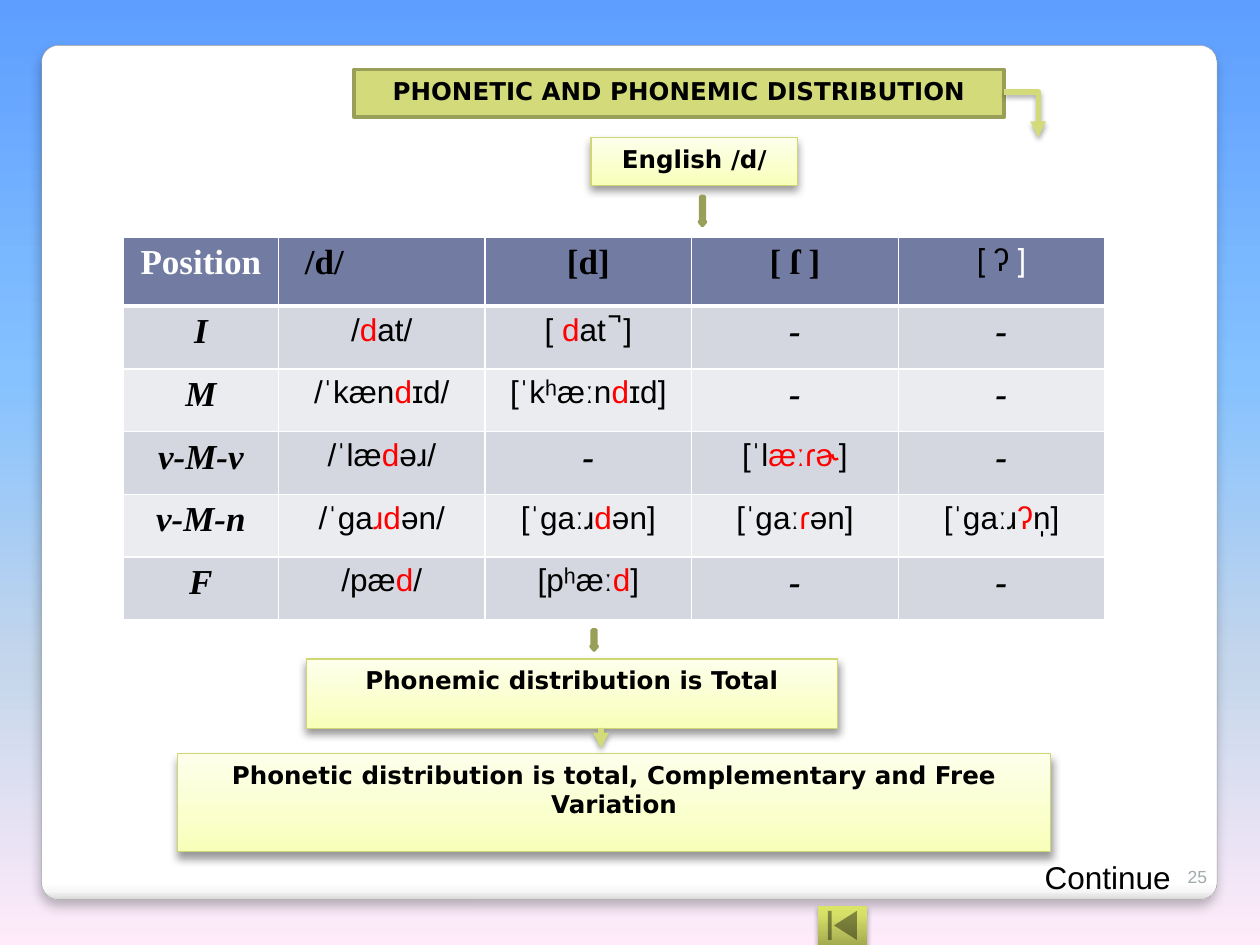
from lxml import etree
from pptx import Presentation
from pptx.dml.color import RGBColor
from pptx.enum import shapes, text
from pptx.oxml.ns import qn
from pptx.util import Inches, Pt

CENTER = text.PP_ALIGN.CENTER
LEFT = text.PP_ALIGN.LEFT
RIGHT = text.PP_ALIGN.RIGHT
RECT = shapes.MSO_SHAPE.RECTANGLE
LABEL = dict(name="DejaVu Sans", size=Pt(14), bold=True, italic=False)
HEADING = dict(name="Times New Roman", size=Pt(20), bold=True, italic=False)
MARK = dict(HEADING, italic=True)
SOUND = dict(name="Arial", size=Pt(18), bold=False, italic=False)
NUMBER = dict(SOUND, size=Pt(10))

SKY = [(0, "5E9EFF"), (40, "85C2FF"), (70, "C4D6EB"), (100, "FFEBFA")]
PAPER = [(0, "FFFFFF"), (98, "FFFFFF"), (99, "F7F7F7"), (100, "D9D9D9")]
CREAM = [(0, "F8FFB8"), (35, "FAFFCC"), (100, "FDFFEB")]
OLIVE = [(0, "A3AB4F"), (80, "D7E168"), (100, "DAE466")]

HEADERS = [
    ([("Position", "FFFFFF")], HEADING),
    ([("/d/", "000000")], HEADING),
    ([("[d]", "000000")], HEADING),
    ([("[ ſ ]", "000000")], HEADING),
    ([("[ ", "FFFFFF"), ("ʔ ]", "000000")], SOUND),
]
ROWS = [
    ("I", "/|d|at/", "[ |d|at ̚ ]", "-", "-"),
    ("M", "/ˈkæn|d|ɪd/", "[ˈkʰæːn|d|ɪd]", "-", "-"),
    ("v-M-v", "/ˈlæ|d|əɹ/", "-", "[ˈl|æːɾɚ|]", "-"),
    ("v-M-n", "/ˈga|ɹd|ən/", "[ˈgaːɹ|d|ən]", "[ˈgaː|ɾ|ən]", "[ˈgaːɹ|ʔ|n̩]"),
    ("F", "/pæ|d|/", "[pʰæː|d|]", "-", "-"),
]


def rgb(value):
    return RGBColor.from_string(value)


def apply(obj, values):
    for name, value in values.items():
        setattr(obj, name, value)


def inches(box):
    return [Inches(v) for v in box]


def add_color(parent, value, alpha=100):
    clr = etree.SubElement(parent, qn("a:srgbClr"), val=value)
    if alpha < 100:
        etree.SubElement(clr, qn("a:alpha"), val=str(alpha * 1000))


def gradient(fill, element, stops, angle):
    fill.gradient()
    fill.gradient_angle = angle
    gs_list = next(element.iter(qn("a:gsLst")))
    for gs in list(gs_list):
        gs_list.remove(gs)
    for pos, value in stops:
        gs = etree.SubElement(gs_list, qn("a:gs"), pos=str(pos * 1000))
        add_color(gs, value)


def outline(sp, value, width):
    sp.line.color.rgb = rgb(value)
    sp.line.width = Pt(width)


def shadow(sp, alpha, blur, dist):
    effects = sp.element.spPr.find(qn("a:effectLst"))
    if effects is None:
        effects = etree.SubElement(sp.element.spPr, qn("a:effectLst"))
    outer = etree.SubElement(effects, qn("a:outerShdw"), blurRad=str(Pt(blur)),
                             dist=str(Pt(dist)), dir="5400000", rotWithShape="0")
    add_color(outer, "000000", alpha)


def arrowhead(sp):
    ln = sp.element.spPr.find(qn("a:ln"))
    etree.SubElement(ln, qn("a:tailEnd"), type="triangle")


def write(tf, runs, font, align):
    p = tf.paragraphs[0]
    p.alignment = align
    for content, value in runs:
        r = p.add_run()
        r.text = content
        apply(r.font, font)
        r.font.color.rgb = rgb(value)
    return p


def frame(tf, **values):
    margins = dict.fromkeys(("margin_left", "margin_top", "margin_right", "margin_bottom"), Inches(0.05))
    apply(tf, dict(margins, **values))


def outline_shape(s, contours, closed=True):
    builder = None
    for points in contours:
        points = [inches(pt) for pt in points]
        if builder is None:
            builder = s.shapes.build_freeform(*points[0])
        else:
            builder.move_to(*points[0])
        builder.add_line_segments(points[1:], close=closed)
    sp = builder.convert_to_shape()
    sp.shadow.inherit = False
    return sp


def panel(s, box):
    sp = s.shapes.add_shape(shapes.MSO_SHAPE.ROUNDED_RECTANGLE, *inches(box))
    sp.adjustments[0] = 0.02
    sp.shadow.inherit = False
    gradient(sp.fill, sp.element, PAPER, 270)
    outline(sp, "A2A1A1", 0.25)
    shadow(sp, 25, 6, 4)


def label(s, box, content, title=False):
    sp = s.shapes.add_shape(RECT, *inches(box))
    sp.shadow.inherit = False
    if title:
        sp.fill.solid()
        sp.fill.fore_color.rgb = rgb("D2DA7A")
        outline(sp, "999F59", 2)
    else:
        gradient(sp.fill, sp.element, CREAM, 90)
        outline(sp, "CFD775", 0.75)
        shadow(sp, 40, 5, 3)
    frame(sp.text_frame, word_wrap=True, vertical_anchor=text.MSO_ANCHOR.TOP)
    write(sp.text_frame, [(content, "000000")], LABEL, CENTER)


def caption(s, box, content, value, font, align, **values):
    sp = s.shapes.add_textbox(*inches(box))
    frame(sp.text_frame, **values)
    write(sp.text_frame, [(content, value)], font, align)


def down_arrow(s, box):
    x, y, w, h = box
    neck = y + h - 0.03
    inner, outer = x + 0.01, x + w - 0.01
    sp = outline_shape(s, [[(x, neck), (inner, neck), (inner, y), (outer, y),
                            (outer, neck), (x + w, neck), (x + w / 2, y + h)]])
    sp.fill.solid()
    sp.fill.fore_color.rgb = rgb("D2DA7A")
    outline(sp, "999F59", 2)


def elbow_arrow(s, box):
    x, y, w, h = box
    sp = outline_shape(s, [[(x, y), (x + w, y), (x + w, y + h)]], closed=False)
    sp.fill.background()
    outline(sp, "D2DA7A", 3)
    arrowhead(sp)
    shadow(sp, 35, 3, 1.8)


def straight_arrow(s, box):
    x, y, w, h = box
    sp = s.shapes.add_connector(shapes.MSO_CONNECTOR.STRAIGHT, *inches((x, y, x + w, y + h)))
    outline(sp, "D2DA7A", 3)
    arrowhead(sp)
    shadow(sp, 35, 3, 1.8)


def style_cell(cell, fill, bottom):
    pr = cell._tc.get_or_add_tcPr()
    for side, width in zip("LRTB", (1, 1, 1, bottom)):
        ln = etree.SubElement(pr, qn("a:ln" + side), w=str(Pt(width)))
        add_color(etree.SubElement(ln, qn("a:solidFill")), "FFFFFF")
    cell.fill.solid()
    cell.fill.fore_color.rgb = rgb(fill)
    frame(cell)


def distribution_table(s, box):
    table = s.shapes.add_table(len(ROWS) + 1, len(HEADERS), *inches(box)).table
    first_col, first_row = 1.23, 0.55
    for i, col in enumerate(table.columns):
        col.width = Inches((box[2] - first_col) / (len(HEADERS) - 1) if i else first_col)
    for i, row in enumerate(table.rows):
        row.height = Inches((box[3] - first_row) / len(ROWS) if i else first_row)
    for i, (runs, font) in enumerate(HEADERS):
        cell = table.cell(0, i)
        style_cell(cell, "727CA3", 3)
        p = write(cell.text_frame, runs, font, LEFT if i == 1 else CENTER)
        if i == 1:
            cell.margin_left = Inches(0.21)
        if font is SOUND:
            p._p.get_or_add_pPr().set("rtl", "1")
    for i, row in enumerate(ROWS, 1):
        for j, content in enumerate(row):
            cell = table.cell(i, j)
            style_cell(cell, "D4D6E0" if i % 2 else "EBECF0", 1)
            runs = [(part, "FF0000" if k % 2 else "000000") for k, part in enumerate(content.split("|"))]
            write(cell.text_frame, runs, SOUND if len(runs) > 1 else MARK, CENTER)


def back_button(s, box):
    x, y, w, h = box
    sp = s.shapes.add_shape(RECT, *inches(box))
    sp.shadow.inherit = False
    gradient(sp.fill, sp.element, OLIVE, 90)
    sp.line.fill.background()
    shadow(sp, 35, 3, 1.8)
    left, top, size = x + 0.08, y + 0.04, 0.23
    right, bottom = left + size, top + size
    icon = outline_shape(s, [
        [(left + 0.05, top + size / 2), (right, top), (right, bottom)],
        [(left + 0.03, top), (left, top), (left, bottom), (left + 0.03, bottom)],
    ])
    icon.fill.solid()
    icon.fill.fore_color.rgb = rgb("000000")
    clr = icon.element.spPr.find(qn("a:solidFill"))[0]
    etree.SubElement(clr, qn("a:alpha"), val="40000")
    icon.line.fill.background()


def main():
    prs = Presentation()
    apply(prs, dict(slide_width=Inches(10), slide_height=Inches(7.5)))
    s = prs.slides.add_slide(prs.slide_layouts[6])
    gradient(s.background.fill, s.element, SKY, 270)
    panel(s, (0.33, 0.36, 9.33, 6.78))
    label(s, (2.81, 0.55, 5.16, 0.38), "PHONETIC AND PHONEMIC DISTRIBUTION", title=True)
    label(s, (4.69, 1.09, 1.64, 0.38), "English /d/")
    distribution_table(s, (0.98, 1.88, 7.79, 3.04))
    label(s, (2.43, 5.23, 4.22, 0.55), "Phonemic distribution is Total")
    label(s, (1.41, 5.98, 6.93, 0.78), "Phonetic distribution is total, Complementary and Free Variation")
    down_arrow(s, (5.55, 1.56, 0.05, 0.23))
    down_arrow(s, (4.69, 5, 0.05, 0.16))
    straight_arrow(s, (4.77, 5.78, 0, 0.16))
    elbow_arrow(s, (7.97, 0.73, 0.27, 0.36))
    caption(s, (8.24, 6.76, 1.11, 0.38), "Continue", "000000", SOUND, LEFT, word_wrap=False)
    back_button(s, (6.49, 7.19, 0.39, 0.31))
    caption(s, (9.13, 6.84, 0.5, 0.25), "25", "A1AAAC", NUMBER, RIGHT,
            word_wrap=True, vertical_anchor=text.MSO_ANCHOR.BOTTOM)
    prs.save("out.pptx")


if __name__ == "__main__":
    main()
